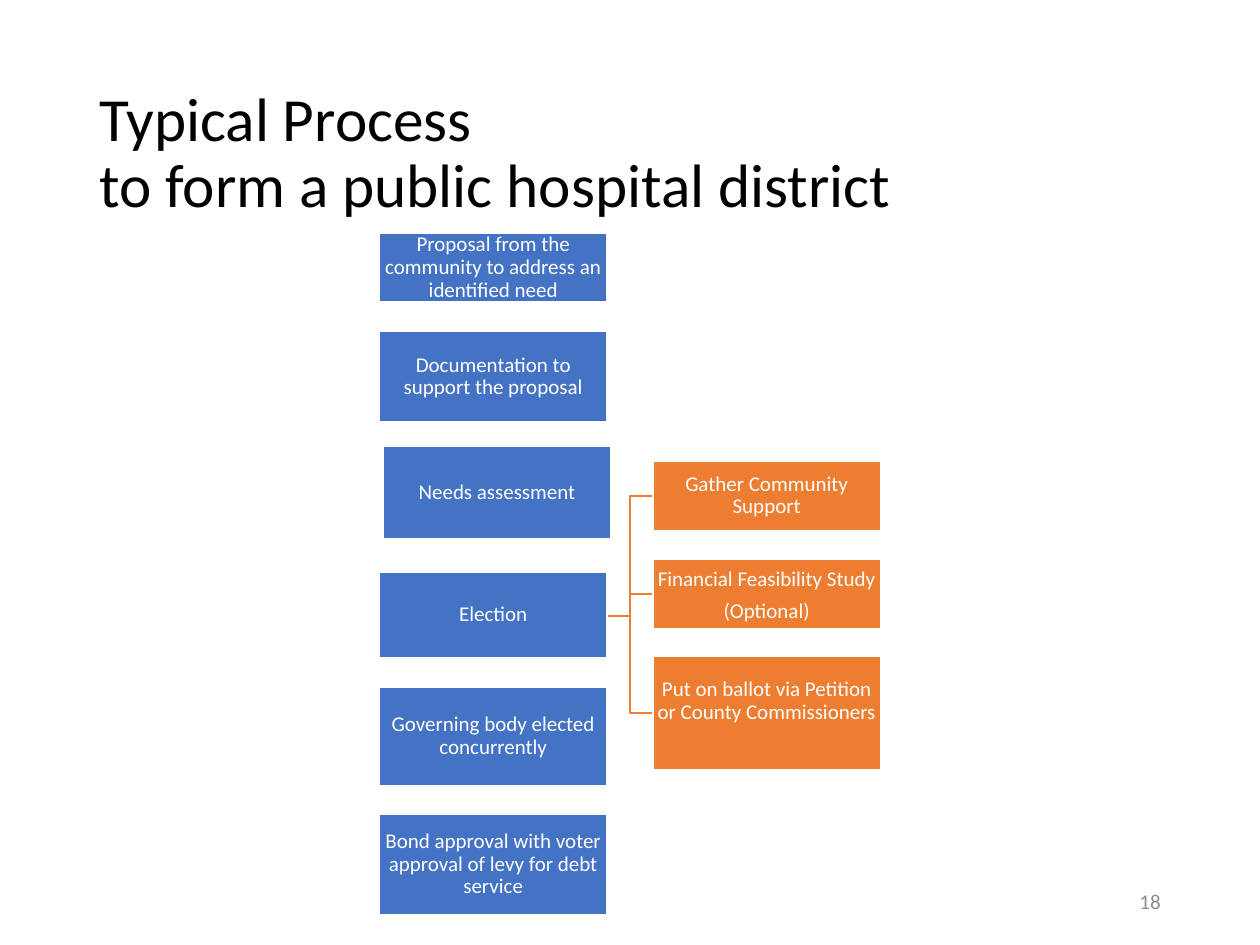
import pptx
import pptx.dml.color
import pptx.enum.shapes
import pptx.enum.text
import pptx.oxml.ns
import pptx.util
from lxml import etree

Inches = pptx.util.Inches
Pt = pptx.util.Pt
RGBColor = pptx.dml.color.RGBColor
ALIGN = pptx.enum.text.PP_ALIGN

BLACK = RGBColor(0x00, 0x00, 0x00)
WHITE = RGBColor(0xFF, 0xFF, 0xFF)
GRAY = RGBColor(0x8C, 0x8C, 0x8C)
BLUE = RGBColor(0x44, 0x72, 0xC4)
ORANGE = RGBColor(0xED, 0x7D, 0x31)

BOX_W = 1.81
STEP_X = 3.01
TASK_X = 5.18
STEPS = [
    ("Proposal from the community to address an identified need", STEP_X, 1.85, 0.55),
    ("Documentation to support the proposal", STEP_X, 2.63, 0.72),
    ("Needs assessment", 3.04, 3.54, 0.74),
    ("Election", STEP_X, 4.54, 0.68),
    ("Governing body elected concurrently", STEP_X, 5.45, 0.79),
    ("Bond approval with voter approval of levy for debt service", STEP_X, 6.46, 0.8),
]
TASKS = [
    (["Gather Community Support"], 3.66, 0.55, {}),
    (["Financial Feasibility Study", "(Optional)"], 4.44, 0.55, {"spacing": 1.0}),
    (["Put on ballot via Petition or County Commissioners"], 5.21, 0.9, {"bottom": 0.19}),
]
ELECTION_MIDDLE = 4.89


def write_text(tf, paragraphs, size=12, color=WHITE, align=ALIGN.CENTER,
               spacing=0.9, gap=4.2, font="Calibri"):
    tf.word_wrap = True
    tf.vertical_anchor = pptx.enum.text.MSO_ANCHOR.MIDDLE
    for i, text in enumerate(paragraphs):
        p = tf.paragraphs[0] if i == 0 else tf.add_paragraph()
        p.text = text
        p.alignment = align
        p.line_spacing = spacing
        p.space_after = Pt(gap)
        for r in p.runs:
            r.font.name = font
            r.font.size = Pt(size)
            r.font.color.rgb = color


class SlideBuilder:
    def __init__(self, s, line_width=1, inset=0.01):
        self.s = s
        self.line_width = Pt(line_width)
        self.inset = inset

    def text(self, paragraphs, x, y, w, h, **style):
        sp = self.s.shapes.add_textbox(Inches(x), Inches(y), Inches(w), Inches(h))
        write_text(sp.text_frame, paragraphs, gap=0, **style)

    def box(self, paragraphs, x, y, h, fill, bottom=0, **style):
        sp = self.s.shapes.add_shape(
            pptx.enum.shapes.MSO_SHAPE.RECTANGLE,
            Inches(x), Inches(y), Inches(BOX_W), Inches(h))
        sp.shadow.inherit = False
        sp.fill.solid()
        sp.fill.fore_color.rgb = fill
        sp.line.color.rgb = WHITE
        sp.line.width = self.line_width
        tf = sp.text_frame
        tf.margin_left = tf.margin_right = tf.margin_top = Inches(self.inset)
        tf.margin_bottom = Inches(self.inset + bottom)
        write_text(tf, paragraphs, **style)

    def elbow(self, x1, y1, x2, y2, color):
        sp = self.s.shapes.add_connector(
            pptx.enum.shapes.MSO_CONNECTOR.ELBOW,
            Inches(x1), Inches(y1), Inches(x2), Inches(y2))
        sp.line.color.rgb = color
        sp.line.width = self.line_width
        etree.SubElement(sp._element.spPr, pptx.oxml.ns.qn("a:effectLst"))


def main():
    prs = pptx.Presentation()
    prs.slide_width = Inches(10)
    prs.slide_height = Inches(7.5)
    slide = SlideBuilder(prs.slides.add_slide(prs.slide_layouts[6]))

    slide.text(["Typical Process\vto form a public hospital district"],
               0.69, 0.61, 8.62, 1.24, size=35, color=BLACK, align=ALIGN.LEFT)
    for _, y, h, _ in reversed(TASKS):
        slide.elbow(STEP_X + BOX_W, ELECTION_MIDDLE, TASK_X, y + h / 2, ORANGE)
    for text, x, y, h in STEPS:
        slide.box([text], x, y, h, BLUE)
    for paragraphs, y, h, style in TASKS:
        slide.box(paragraphs, TASK_X, y, h, ORANGE, **style)
    slide.text(["18"], 7.06, 6.95, 2.25, 0.4, color=GRAY, align=ALIGN.RIGHT, spacing=1.0)

    prs.save("out.pptx")


if __name__ == "__main__":
    main()
